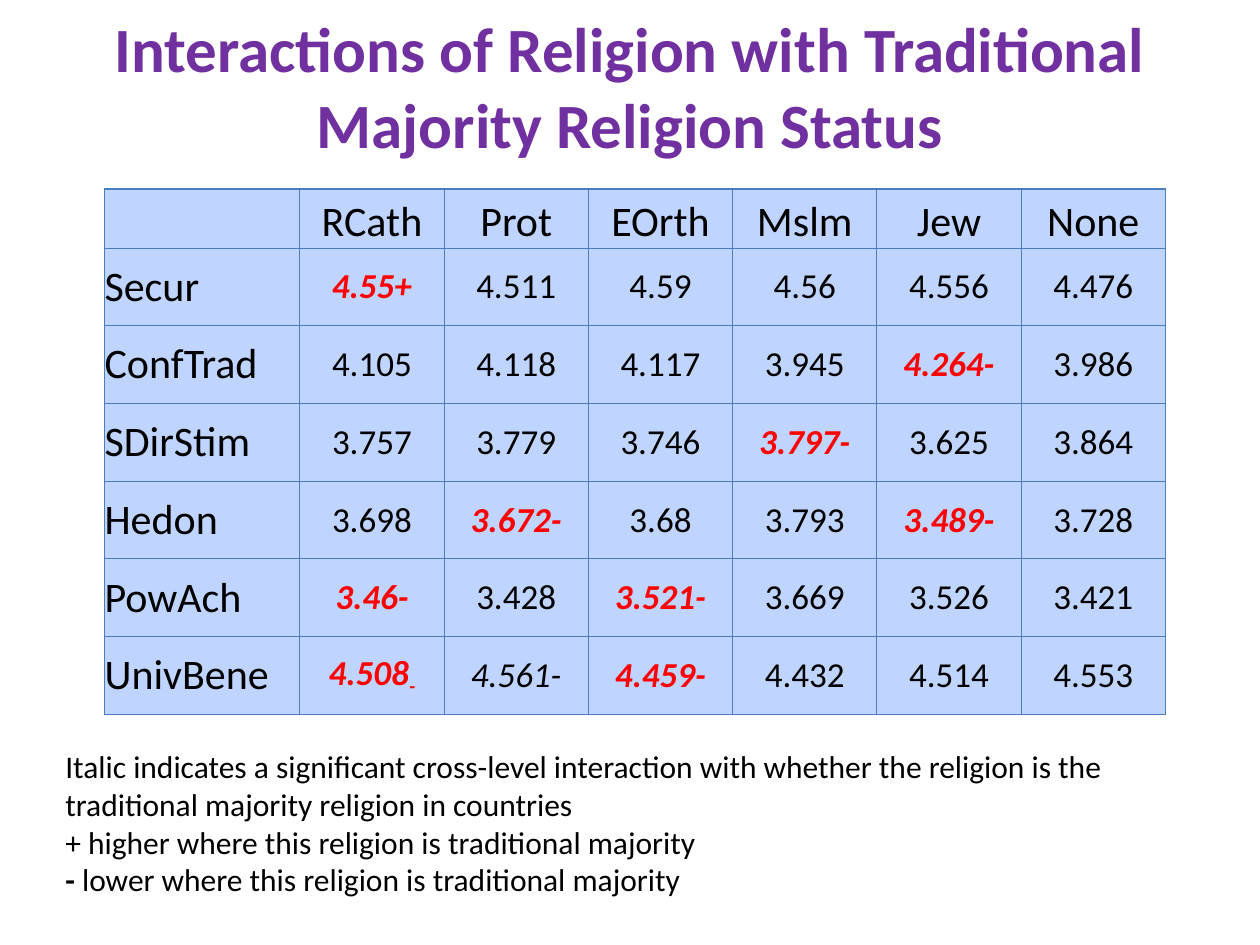
"""Build a slide tabulating religion by traditional majority status interactions."""
from lxml import etree
from pptx import Presentation
from pptx import util as u
from pptx.dml.color import RGBColor
from pptx.enum import text
from pptx.oxml.ns import qn

FONT = "Calibri"
PURPLE = RGBColor(0x70, 0x30, 0xA0)
BLACK = RGBColor(0, 0, 0)
RED = RGBColor(0xFF, 0, 0)
CELL_BLUE = RGBColor(0xBF, 0xD4, 0xFF)
BORDER_BLUE = RGBColor(0x4B, 0x7E, 0xBC)

TITLE = "Interactions of Religion with Traditional Majority Religion Status"
ROWS = [
    ["", "RCath", "Prot", "EOrth", "Mslm", "Jew", "None"],
    ["Secur", "4.55+", "4.511", "4.59", "4.56", "4.556", "4.476"],
    ["ConfTrad", "4.105", "4.118", "4.117", "3.945", "4.264-", "3.986"],
    ["SDirStim", "3.757", "3.779", "3.746", "3.797-", "3.625", "3.864"],
    ["Hedon", "3.698", "3.672-", "3.68", "3.793", "3.489-", "3.728"],
    ["PowAch", "3.46-", "3.428", "3.521-", "3.669", "3.526", "3.421"],
    ["UnivBene", "4.508-", "4.561-", "4.459-", "4.432", "4.514", "4.553"],
]
PLAIN_ITALIC = "4.561-"
SUBSCRIPT_SIGN = "4.508-"
NOTES = [
    [("Italic indicates a significant cross-level interaction with whether "
      "the religion is the traditional majority religion in countries", False)],
    [("+ higher where this religion is traditional majority", False)],
    [("-", True), (" lower where this religion is traditional majority", False)],
]

LEFT, TOP, WIDTH, HEIGHT = 0.83, 1.5, 8.42, 4.17
LABEL_WIDTH, HEADER_HEIGHT = 1.55, 0.47


def style(font, size, color=BLACK, bold=False, italic=False):
    font.name, font.size = FONT, u.Pt(size)
    font.bold, font.italic = bold, italic
    font.color.rgb = color


def add_borders(cell):
    tcPr = cell._tc.get_or_add_tcPr()
    for side in ("lnL", "lnR", "lnT", "lnB"):
        ln = etree.SubElement(tcPr, qn(f"a:{side}"), w=str(u.Pt(0.75)))
        fill = etree.SubElement(ln, qn("a:solidFill"))
        etree.SubElement(fill, qn("a:srgbClr"), val=str(BORDER_BLUE))


def fill_cell(cell, value, row, col):
    add_borders(cell)
    cell.fill.solid()
    cell.fill.fore_color.rgb = CELL_BLUE
    cell.margin_left = cell.margin_right = cell.margin_top = cell.margin_bottom = 0
    cell.vertical_anchor = text.MSO_ANCHOR.MIDDLE if row else text.MSO_ANCHOR.BOTTOM
    p = cell.text_frame.paragraphs[0]
    p.alignment = text.PP_ALIGN.CENTER if col else text.PP_ALIGN.LEFT
    significant = value.endswith(("+", "-"))
    strong = significant and value != PLAIN_ITALIC
    style(p.font, 20 if row and col else 24, RED if strong else BLACK,
          strong, significant)
    if value == SUBSCRIPT_SIGN:
        p.add_run().text = value[:-1]
        r = p.add_run()
        r.text = value[-1]
        r._r.get_or_add_rPr().set("baseline", "-25000")
    elif value:
        p.add_run().text = value


def add_title(s):
    sp = s.shapes.title
    sp.left, sp.top, sp.width, sp.height = map(u.Inches, (0, 0.02, 10, 1.31))
    tf = sp.text_frame
    tf.text = TITLE
    tf.word_wrap = True
    tf.vertical_anchor = text.MSO_ANCHOR.MIDDLE
    p = tf.paragraphs[0]
    p.alignment = text.PP_ALIGN.CENTER
    style(p.font, 36, PURPLE, bold=True)


def add_scores(s):
    n_rows, n_cols = len(ROWS), len(ROWS[0])
    table = s.shapes.add_table(
        n_rows, n_cols, *map(u.Inches, (LEFT, TOP, WIDTH, HEIGHT))).table
    for i, column in enumerate(table.columns):
        column.width = u.Inches((WIDTH - LABEL_WIDTH) / (n_cols - 1) if i else LABEL_WIDTH)
    for i, row in enumerate(table.rows):
        row.height = u.Inches((HEIGHT - HEADER_HEIGHT) / (n_rows - 1) if i else HEADER_HEIGHT)
    for i, values in enumerate(ROWS):
        for j, value in enumerate(values):
            fill_cell(table.cell(i, j), value, i, j)


def add_notes(s):
    tf = s.shapes.add_textbox(*map(u.Inches, (0.42, 5.88, 9.08, 1.62))).text_frame
    tf.word_wrap = True
    for i, runs in enumerate(NOTES):
        p = tf.add_paragraph() if i else tf.paragraphs[0]
        style(p.font, 18)
        for words, bold in runs:
            r = p.add_run()
            r.text = words
            r.font.bold = bold


def main():
    prs = Presentation()
    prs.slide_width, prs.slide_height = u.Inches(10), u.Inches(7.5)
    s = prs.slides.add_slide(prs.slide_layouts[5])
    add_title(s)
    add_notes(s)
    add_scores(s)
    prs.save("out.pptx")


if __name__ == "__main__":
    main()
